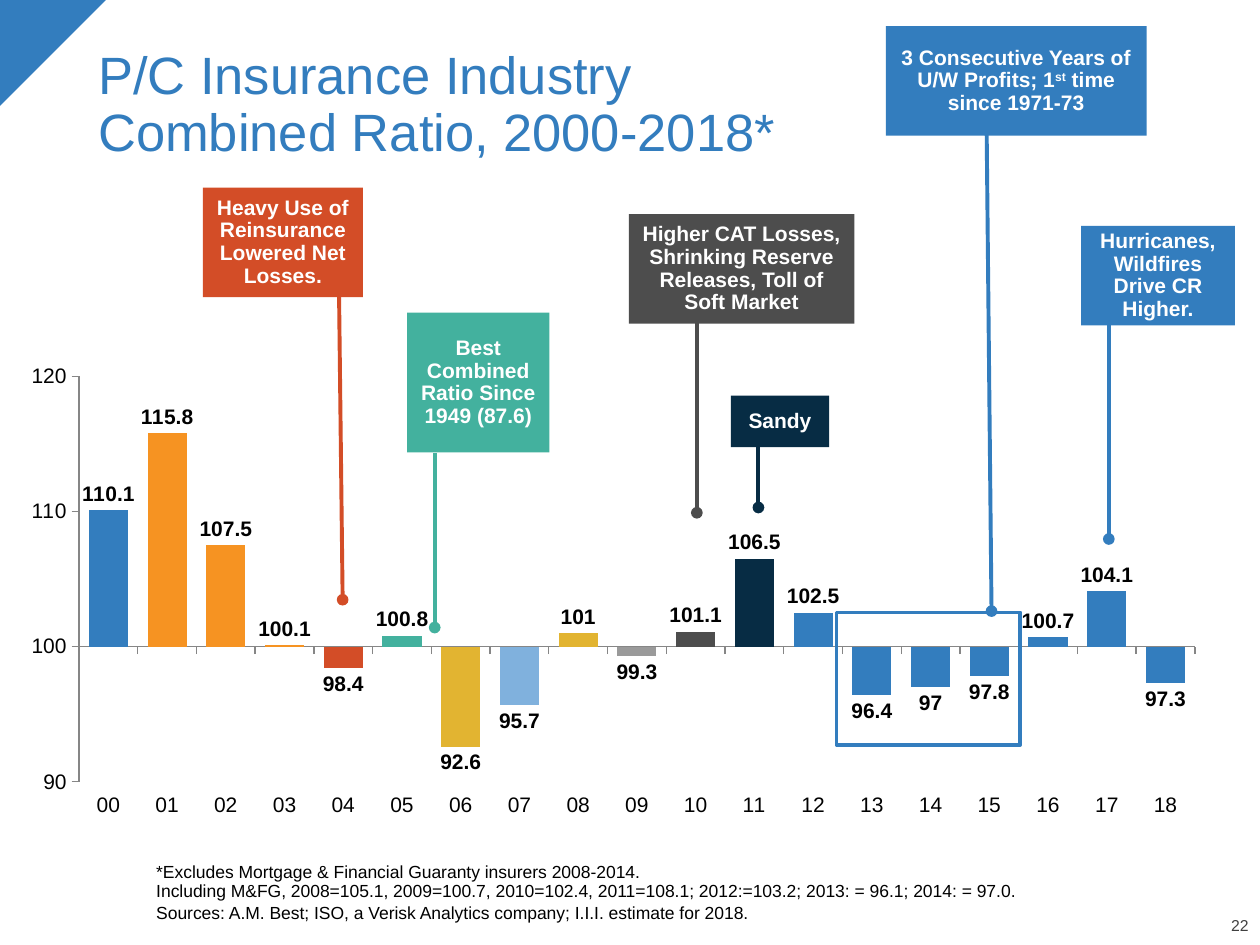
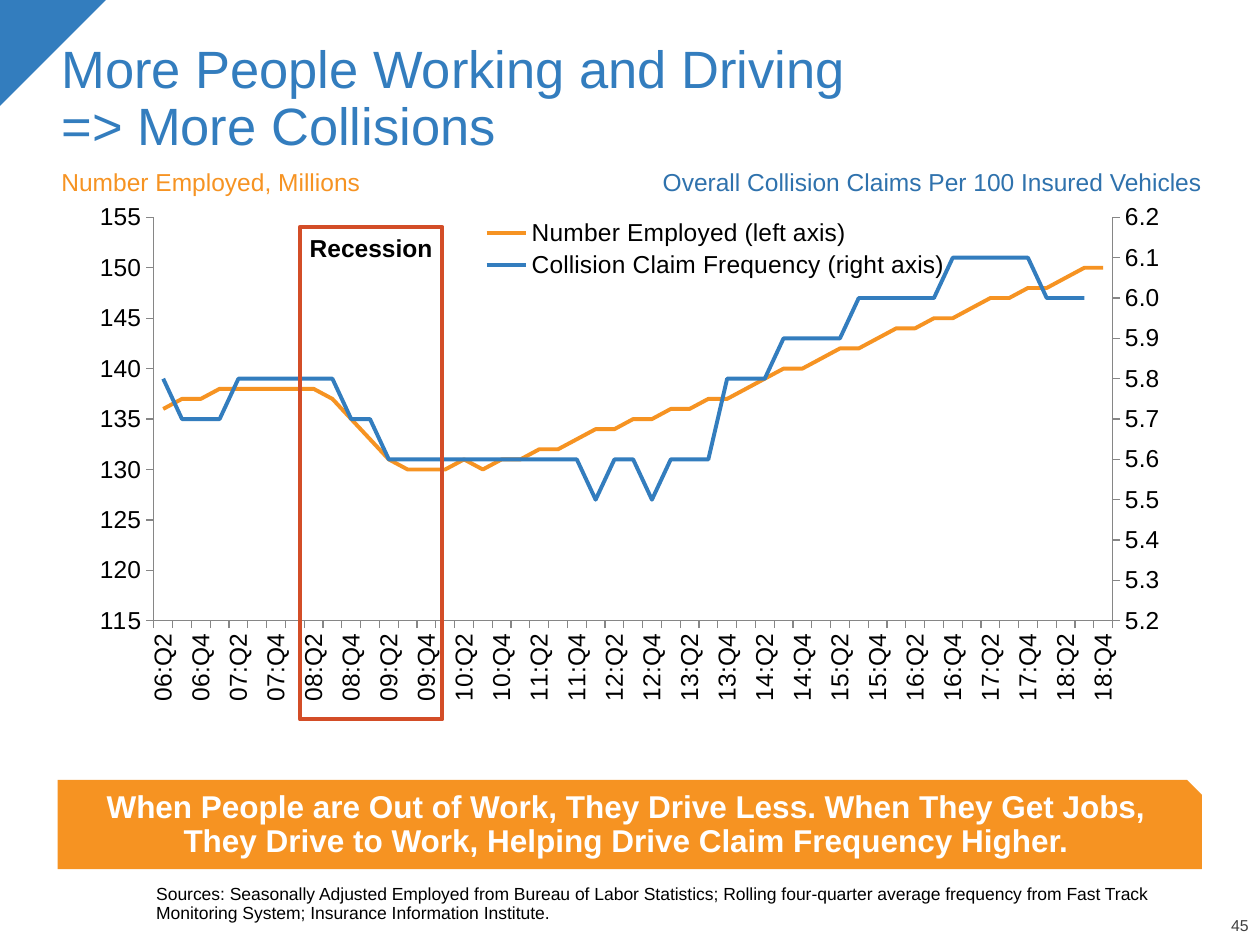
from copy import deepcopy
from dataclasses import dataclass

from lxml import etree
from pptx import Presentation
from pptx.chart.axis import CategoryAxis, ValueAxis
from pptx.chart.data import CategoryChartData
from pptx.dml.color import RGBColor
from pptx.enum.chart import (XL_CHART_TYPE, XL_LABEL_POSITION, XL_LEGEND_POSITION,
                             XL_TICK_LABEL_POSITION, XL_TICK_MARK)
from pptx.enum.shapes import MSO_CONNECTOR, MSO_SHAPE
from pptx.enum.text import MSO_ANCHOR, PP_ALIGN
from pptx.oxml.ns import qn
from pptx.util import Pt

LEFT, CENTER, RIGHT = PP_ALIGN.LEFT, PP_ALIGN.CENTER, PP_ALIGN.RIGHT
TOP, MIDDLE, BOTTOM = MSO_ANCHOR.TOP, MSO_ANCHOR.MIDDLE, MSO_ANCHOR.BOTTOM
RECTANGLE, CORNER, BANNER = MSO_SHAPE.RECTANGLE, MSO_SHAPE.RIGHT_TRIANGLE, MSO_SHAPE.SNIP_1_RECTANGLE
STRAIGHT = MSO_CONNECTOR.STRAIGHT
COLUMNS, LINES = XL_CHART_TYPE.COLUMN_CLUSTERED, XL_CHART_TYPE.LINE
TICK_OUTSIDE, NO_TICK = XL_TICK_MARK.OUTSIDE, XL_TICK_MARK.NONE
LABELS_LOW = XL_TICK_LABEL_POSITION.LOW
OUTSIDE_END = XL_LABEL_POSITION.OUTSIDE_END
LEGEND_BOTTOM = XL_LEGEND_POSITION.BOTTOM


@dataclass(frozen=True)
class Theme:
    font: str = "Arial"
    blue: str = "337DBE"
    label_blue: str = "2F72AD"
    sky: str = "80B1DD"
    navy: str = "072C44"
    orange: str = "F69322"
    red: str = "D34D27"
    teal: str = "43B19E"
    gold: str = "E2B431"
    silver: str = "9A9A9A"
    charcoal: str = "4D4D4D"
    page_gray: str = "404040"
    axis_gray: str = "868686"
    white: str = "FFFFFF"
    black: str = "000000"
    title_size: float = 30
    banner_size: float = 18
    label_size: float = 14
    callout_size: float = 12
    source_size: float = 10
    page_size: float = 9
    line: float = 2.25
    axis_line: float = 0.75
    spacing: float = 0.9


THEME = Theme()

RATIOS = [110.1, 115.8, 107.5, 100.1, 98.4, 100.8, 92.6, 95.7, 101, 99.3,
          101.1, 106.5, 102.5, 96.4, 97, 97.8, 100.7, 104.1, 97.3]
YEAR_COLORS = {1: THEME.orange, 2: THEME.orange, 3: THEME.orange, 4: THEME.red,
               5: THEME.teal, 6: THEME.gold, 7: THEME.sky, 8: THEME.gold,
               9: THEME.silver, 10: THEME.charcoal, 11: THEME.navy}
EMPLOYED = [136, 137, 137, 138, 138, 138, 138, 138, 138, 137, 135, 133, 131, 130, 130, 130, 131,
            130, 131, 131, 132, 132, 133, 134, 134, 135, 135, 136, 136, 137, 137, 138, 139, 140,
            140, 141, 142, 142, 143, 144, 144, 145, 145, 146, 147, 147, 148, 148, 149, 150, 150]
CLAIMS = [5.8, 5.7, 5.7, 5.7, 5.8, 5.8, 5.8, 5.8, 5.8, 5.8, 5.7, 5.7, 5.6, 5.6, 5.6, 5.6, 5.6,
          5.6, 5.6, 5.6, 5.6, 5.6, 5.6, 5.5, 5.6, 5.6, 5.5, 5.6, 5.6, 5.6, 5.8, 5.8, 5.8, 5.9,
          5.9, 5.9, 5.9, 6, 6, 6, 6, 6, 6.1, 6.1, 6.1, 6.1, 6.1, 6, 6, 6, None]
# box, text, colour, pointer start, pointer end
CALLOUTS = [
    ((617.8, 129, 87.8, 57), "Hurricanes, Wildfires Drive CR Higher.",
     THEME.blue, (633.6, 186), (633.6, 308)),
    ((116, 107.3, 91.4, 62.6), "Heavy Use of Reinsurance Lowered Net Losses.",
     THEME.red, (193.7, 164), (195.8, 342.7)),
    ((232.6, 178.6, 81.4, 80), "Best Combined Ratio Since 1949 (87.6)",
     THEME.teal, (248.4, 259), (248.4, 358.6)),
    ((359.3, 122.4, 129, 62.6),
     "Higher CAT Losses, Shrinking Reserve Releases, Toll of Soft Market",
     THEME.charcoal, (398.2, 178.6), (398.2, 293)),
    ((417.6, 226, 56.2, 29.5), "Sandy", THEME.navy, (433.4, 252), (433.4, 290)),
    ((506.2, 15, 149, 62.6), "3 Consecutive Years of U/W Profits; 1^st^ time since 1971-73",
     THEME.blue, (563.8, 72.7), (566.6, 349.2)),
]


def rgb(color):
    return RGBColor.from_string(color)


def points(lengths):
    return [Pt(length) for length in lengths]


def style_font(font, size, color=THEME.black, bold=False):
    font.name, font.size, font.bold = THEME.font, Pt(size), bold
    font.color.rgb = rgb(color)


def write_text(shape, *paragraphs, size, color=THEME.black, bold=False, align=LEFT, anchor=TOP,
               inset=(7.2, 3.6, 7.2, 3.6), spacing=THEME.spacing, gap=0, wrap=True):
    """Fill a shape with paragraphs; ^x^ is superscript and a newline breaks the line."""
    frame = shape.text_frame
    frame.word_wrap, frame.vertical_anchor = wrap, anchor
    (frame.margin_left, frame.margin_top,
     frame.margin_right, frame.margin_bottom) = points(inset)
    for number, text in enumerate(paragraphs):
        paragraph = frame.add_paragraph() if number else frame.paragraphs[0]
        paragraph.alignment, paragraph.line_spacing = align, spacing
        paragraph.space_before = Pt(gap if number else 0)
        for row, line in enumerate(text.split("\n")):
            if row:
                paragraph.add_line_break()
            for part, words in enumerate(line.split("^")):
                run = paragraph.add_run()
                run.text = words
                style_font(run.font, size, color, bold)
                if part % 2:
                    run._r.get_or_add_rPr().set("baseline", "30000")


def add_text(slide, box, *paragraphs, **text_format):
    write_text(slide.shapes.add_textbox(*points(box)), *paragraphs, **text_format)


def add_panel(slide, kind, box, fill=None, outline=None):
    panel = slide.shapes.add_shape(kind, *points(box))
    panel.shadow.inherit = False
    if fill:
        panel.fill.solid()
        panel.fill.fore_color.rgb = rgb(fill)
    else:
        panel.fill.background()
    if outline:
        panel.line.color.rgb, panel.line.width = rgb(outline), Pt(THEME.line)
    else:
        panel.line.fill.background()
    return panel


def add_callout(slide, box, text, color, start, end):
    """Filled note with a pointer that ends in a dot."""
    note = add_panel(slide, RECTANGLE, box, fill=color)
    write_text(note, text, size=THEME.callout_size, color=THEME.white, bold=True,
               align=CENTER, anchor=MIDDLE, inset=(7.2, 0, 7.2, 0))
    pointer = slide.shapes.add_connector(STRAIGHT, *points(start + end))
    pointer.line.color.rgb, pointer.line.width = rgb(color), Pt(THEME.line)
    etree.SubElement(pointer.line._get_or_add_ln(), qn("a:tailEnd"), type="oval")
    etree.SubElement(pointer._element.spPr, qn("a:effectLst"))


def add_base_slide(deck, title, title_box, page, *sources):
    slide = deck.slides.add_slide(deck.slide_layouts[6])
    add_panel(slide, CORNER, (0, 0, 60.5, 60.5), fill=THEME.blue).rotation = 90
    flush = dict(anchor=BOTTOM, inset=(0, 0, 0, 0))
    add_text(slide, (679, 525, 34.5, 9.4), page, size=THEME.page_size,
             color=THEME.page_gray, align=RIGHT, **flush)
    add_text(slide, title_box, title, size=THEME.title_size, color=THEME.blue, anchor=BOTTOM)
    add_text(slide, (89.3, 495.4, 604.8, 32.4), *sources, size=THEME.source_size, gap=2, **flush)
    return slide


def make_layout(x, y, w, h, inner=False):
    layout = etree.Element(qn("c:layout"))
    manual = etree.SubElement(layout, qn("c:manualLayout"))
    settings = [("layoutTarget", "inner")] if inner else []
    settings += [("xMode", "edge"), ("yMode", "edge"), ("x", x), ("y", y), ("w", w), ("h", h)]
    for tag, value in settings:
        etree.SubElement(manual, qn(f"c:{tag}"), val=str(value))
    return layout


def add_chart(slide, kind, box, categories, series, plot_area, size):
    data = CategoryChartData()
    data.categories = categories
    for name, values in series:
        data.add_series(name, values)
    chart = slide.shapes.add_chart(kind, *points(box), data).chart
    chart.has_title = chart.has_legend = False
    style_font(chart.font, size)
    area = chart._chartSpace.chart.plotArea
    for old in area.findall(qn("c:layout")):
        area.remove(old)
    area.insert(0, make_layout(*plot_area, inner=True))
    for axis in (chart.category_axis, chart.value_axis):
        axis.has_major_gridlines = False
        axis.major_tick_mark, axis.minor_tick_mark = TICK_OUTSIDE, NO_TICK
        axis.format.line.color.rgb = rgb(THEME.axis_gray)
        axis.format.line.width = Pt(THEME.axis_line)
        style_font(axis.tick_labels.font, size)
    return chart


def scale_axis(axis, low, high, step, number_format):
    axis.minimum_scale, axis.maximum_scale, axis.major_unit = low, high, step
    axis.tick_labels.number_format = number_format
    axis.tick_labels.number_format_is_linked = False


def move_last_series_to_right_axis(chart):
    """Give the second series its own plot and axes; return the right axis."""
    area = chart._chartSpace.chart.plotArea
    left_plot = area.find(qn("c:lineChart"))
    left_category, left_value = area.find(qn("c:catAx")), area.find(qn("c:valAx"))
    right_plot, category, value = map(deepcopy, (left_plot, left_category, left_value))
    left_plot.remove(left_plot.findall(qn("c:ser"))[1])
    right_plot.remove(right_plot.findall(qn("c:ser"))[0])
    left_plot.addnext(right_plot)
    left_value.addnext(value)
    value.addnext(category)
    category_id, value_id = "5001", "5002"
    for element, axis_id in zip(right_plot.findall(qn("c:axId")), (category_id, value_id)):
        element.set("val", axis_id)
    for axis, own_id, cross_id in ((category, category_id, value_id),
                                   (value, value_id, category_id)):
        axis.find(qn("c:axId")).set("val", own_id)
        axis.find(qn("c:crossAx")).set("val", cross_id)
    CategoryAxis(category).visible = False
    value.find(qn("c:axPos")).set("val", "r")
    value.find(qn("c:crosses")).set("val", "max")
    return ValueAxis(value)


def add_ratio_chart(slide):
    chart = add_chart(slide, COLUMNS, (15.8, 194.4, 667.4, 276.5),
                      [f"{year:02}" for year in range(len(RATIOS))],
                      [("Combined Ratio", RATIOS)], (0.048, 0.075, 0.956, 0.838),
                      THEME.callout_size)
    scale_axis(chart.value_axis, 90, 120, 10, "0")
    chart.value_axis.crosses_at = 100
    for axis in (chart.category_axis, chart.value_axis):
        axis.tick_label_position = LABELS_LOW
    plot = chart.plots[0]
    plot.gap_width, plot.vary_by_categories = 50, False
    plot.has_data_labels = True
    labels = plot.data_labels
    labels.show_value, labels.position = True, OUTSIDE_END
    style_font(labels.font, THEME.callout_size, bold=True)
    ratio = plot.series[0]
    ratio.invert_if_negative = False
    ratio.format.fill.solid()
    ratio.format.fill.fore_color.rgb = rgb(THEME.blue)
    for year, color in YEAR_COLORS.items():
        fill = ratio.points[year].format.fill
        fill.solid()
        fill.fore_color.rgb = rgb(color)


def add_collision_chart(slide):
    quarters = [f"{n // 4:02}:Q{n % 4 + 1}" for n in range(25, 25 + len(EMPLOYED))]
    chart = add_chart(slide, LINES, (33, 109.4, 653.8, 329.8), quarters,
                      [("Number Employed (left axis)", EMPLOYED),
                       ("Collision Claim Frequency (right axis)", CLAIMS)],
                      (0.084, 0.045, 0.838, 0.699), THEME.label_size)
    chart.plots[0].vary_by_categories = False
    for series, color in zip(chart.plots[0].series, (THEME.orange, THEME.blue)):
        series.smooth = False
        series.format.line.color.rgb, series.format.line.width = rgb(color), Pt(THEME.line)
    scale_axis(chart.value_axis, 115, 155, 5, "#,##0")
    quarter_axis = chart.category_axis._element
    quarter_axis.find(qn("c:txPr")).find(qn("a:bodyPr")).set("rot", "-5400000")
    skip = etree.Element(qn("c:tickLblSkip"), val="2")
    quarter_axis.find(qn("c:noMultiLvlLbl")).addprevious(skip)
    scale_axis(move_last_series_to_right_axis(chart), 5.2, 6.2, 0.1, "0.0")

    chart.has_legend = True
    legend = chart.legend
    legend.position, legend.include_in_layout = LEGEND_BOTTOM, False
    style_font(legend.font, THEME.label_size)
    for old in legend._element.findall(qn("c:layout")):
        legend._element.remove(old)
    legend._element.find(qn("c:legendPos")).addnext(make_layout(0.365, 0.04, 0.42, 0.12))


def build_ratio_slide(deck):
    slide = add_base_slide(
        deck, "P/C Insurance Industry \nCombined Ratio, 2000-2018*", (49, 21.6, 420, 75), "22",
        "*Excludes Mortgage & Financial Guaranty insurers 2008-2014.\n"
        "Including M&FG, 2008=105.1, 2009=100.7, 2010=102.4, 2011=108.1; 2012:=103.2; "
        "2013: = 96.1; 2014: = 97.0.",
        "Sources: A.M. Best; ISO, a Verisk Analytics company; I.I.I. estimate for 2018.")
    add_ratio_chart(slide)
    for callout in CALLOUTS:
        add_callout(slide, *callout)
    add_panel(slide, RECTANGLE, (478, 350, 105, 75.6), outline=THEME.blue)


def build_collision_slide(deck):
    slide = add_base_slide(
        deck, "More People Working and Driving\n=> More Collisions", (28, 18, 666, 75), "45",
        "Sources: Seasonally Adjusted Employed from Bureau of Labor Statistics; Rolling "
        "four-quarter average frequency from Fast Track Monitoring System; Insurance "
        "Information Institute.")
    add_text(slide, (28, 93.6, 274, 31), "Number Employed, Millions",
             size=THEME.label_size, color=THEME.orange)
    banner = add_panel(slide, BANNER, (33, 445.7, 653.8, 51), fill=THEME.orange)
    write_text(banner, "When People are Out of Work, They Drive Less. When They Get Jobs,\n"
               "They Drive to Work, Helping Drive Claim Frequency Higher.",
               size=THEME.banner_size, color=THEME.white, bold=True, align=CENTER,
               anchor=MIDDLE, inset=(7.2, 3.6, 7.2, 7.2))
    add_collision_chart(slide)
    add_text(slide, (361.4, 93.6, 332.6, 31), "Overall Collision Claims Per 100 Insured Vehicles",
             size=THEME.label_size, color=THEME.label_blue, align=RIGHT)
    recession = add_panel(slide, RECTANGLE, (171.4, 129.6, 81.4, 281.5), outline=THEME.red)
    write_text(recession, "Recession", size=THEME.label_size, bold=True, align=CENTER,
               spacing=1, wrap=False)


def main():
    deck = Presentation()
    deck.slide_width, deck.slide_height = Pt(720), Pt(540)
    build_ratio_slide(deck)
    build_collision_slide(deck)
    deck.save("out.pptx")


if __name__ == "__main__":
    main()
